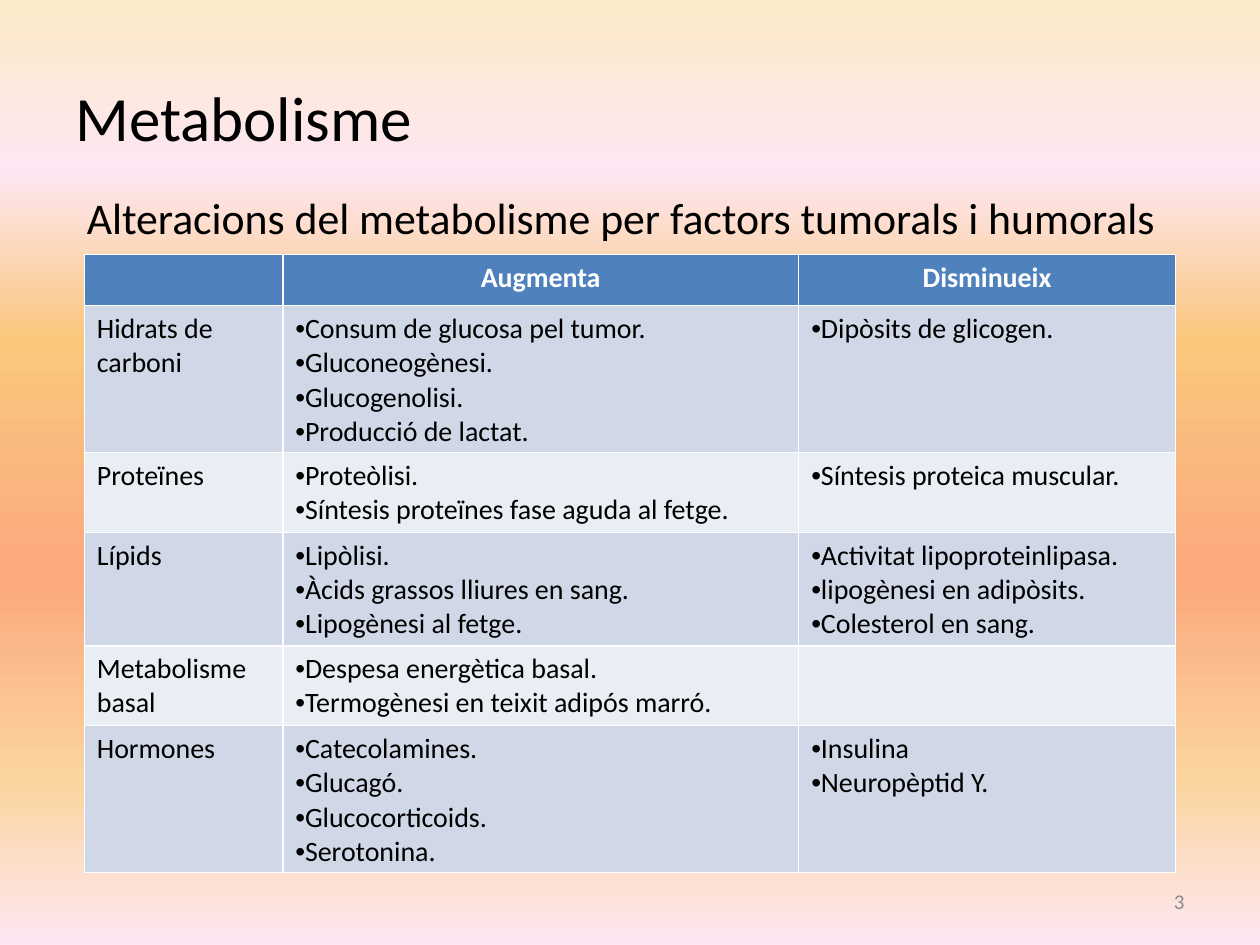
from lxml import etree
from pptx import Presentation
from pptx.dml.color import RGBColor
from pptx.enum import text
from pptx.oxml import ns
from pptx.util import Cm, Pt

COLORS = {
    "ink": "000000",
    "white": "FFFFFF",
    "number": "8C8C8C",
    "header": "4F81BD",
    "band_dark": "D0D8E8",
    "band_light": "E9EDF4",
}
BACKDROP = [(0, "FBEAC7"), (18, "FEE7F2"), (36, "FAC77D"),
            (61, "FBA97D"), (82, "FBD49C"), (100, "FEE7F2")]
HEADINGS = ["", "Augmenta", "Disminueix"]
CHANGES = [
    ("Hidrats de carboni",
     ["Consum de glucosa pel tumor.", "Gluconeogènesi.", "Glucogenolisi.", "Producció de lactat."],
     ["Dipòsits de glicogen."]),
    ("Proteïnes",
     ["Proteòlisi.", "Síntesis proteïnes fase aguda al fetge."],
     ["Síntesis proteica muscular."]),
    ("Lípids",
     ["Lipòlisi.", "Àcids grassos lliures en sang.", "Lipogènesi al fetge."],
     ["Activitat lipoproteinlipasa.", "lipogènesi en adipòsits.", "Colesterol en sang."]),
    ("Metabolisme basal",
     ["Despesa energètica basal.", "Termogènesi en teixit adipós marró."],
     []),
    ("Hormones",
     ["Catecolamines.", "Glucagó.", "Glucocorticoids.", "Serotonina."],
     ["Insulina", "Neuropèptid Y."]),
]


class Deck:
    font = "Calibri"
    cell_size = 16

    def __init__(self, width, height):
        self.prs = Presentation()
        self.prs.slide_width, self.prs.slide_height = Cm(width), Cm(height)
        self.slide = self.prs.slides.add_slide(self.prs.slide_layouts[6])

    def backdrop(self, stops):
        fill = self.slide.background.fill
        fill.gradient()
        fill.gradient_angle = 270
        stop_list = self.slide.element.find(".//" + ns.qn("a:gsLst"))
        for old in list(stop_list):
            stop_list.remove(old)
        for percent, color in stops:
            stop = etree.SubElement(stop_list, ns.qn("a:gs"), pos=str(percent * 1000))
            etree.SubElement(stop, ns.qn("a:srgbClr"), val=color)

    def style(self, frame, size, color, align, bold=False):
        for paragraph in frame.paragraphs:
            paragraph.alignment = align
            for run in paragraph.runs:
                run.font.name, run.font.size, run.font.bold = self.font, Pt(size), bold
                run.font.color.rgb = RGBColor.from_string(COLORS[color])

    def label(self, words, box, size, color="ink", align=text.PP_ALIGN.LEFT,
              anchor=text.MSO_ANCHOR.MIDDLE):
        frame = self.slide.shapes.add_textbox(*map(Cm, box)).text_frame
        frame.word_wrap = True
        frame.vertical_anchor = anchor
        frame.text = words
        self.style(frame, size, color, align)

    def bullets(self, frame):
        for paragraph in frame.paragraphs:
            props = paragraph._p.get_or_add_pPr()
            etree.SubElement(props, ns.qn("a:buFont"), typeface="Arial")
            etree.SubElement(props, ns.qn("a:buChar"), char="•")

    def cell(self, cell, lines, fill, color="ink", align=text.PP_ALIGN.LEFT,
             bold=False, bulleted=False):
        cell.fill.solid()
        cell.fill.fore_color.rgb = RGBColor.from_string(COLORS[fill])
        cell.text_frame.text = "\n".join(lines)
        self.style(cell.text_frame, self.cell_size, color, align, bold)
        if bulleted and lines:
            self.bullets(cell.text_frame)

    def table(self, headings, changes, left, top, widths, row_height):
        rows = len(changes) + 1
        grid = self.slide.shapes.add_table(
            rows, len(widths), Cm(left), Cm(top), Cm(sum(widths)), Cm(row_height * rows)).table
        for column, width in zip(grid.columns, widths):
            column.width = Cm(width)
        for col, heading in enumerate(headings):
            self.cell(grid.cell(0, col), [heading] if heading else [], "header", "white",
                      text.PP_ALIGN.CENTER, bold=True)
        for row, (topic, *effects) in enumerate(changes, 1):
            band = "band_dark" if row % 2 else "band_light"
            self.cell(grid.cell(row, 0), [topic], band)
            for col, effect in enumerate(effects, 1):
                self.cell(grid.cell(row, col), effect, band, bulleted=True)


def main():
    deck = Deck(25.4, 19.05)
    deck.backdrop(BACKDROP)
    deck.label("Metabolisme", (1.27, 0.76, 22.86, 3.18), 36)
    deck.label("Alteracions del metabolisme per factors tumorals i humorals",
               (1.5, 3.73, 22.86, 6.8), 25, align=text.PP_ALIGN.JUSTIFY,
               anchor=text.MSO_ANCHOR.TOP)
    deck.table(HEADINGS, CHANGES, 1.7, 5.13, [4, 10.4, 7.6], 1.03)
    deck.label("3", (18.2, 17.66, 5.93, 1.01), 12, "number", text.PP_ALIGN.RIGHT)
    deck.prs.save("out.pptx")


if __name__ == "__main__":
    main()
